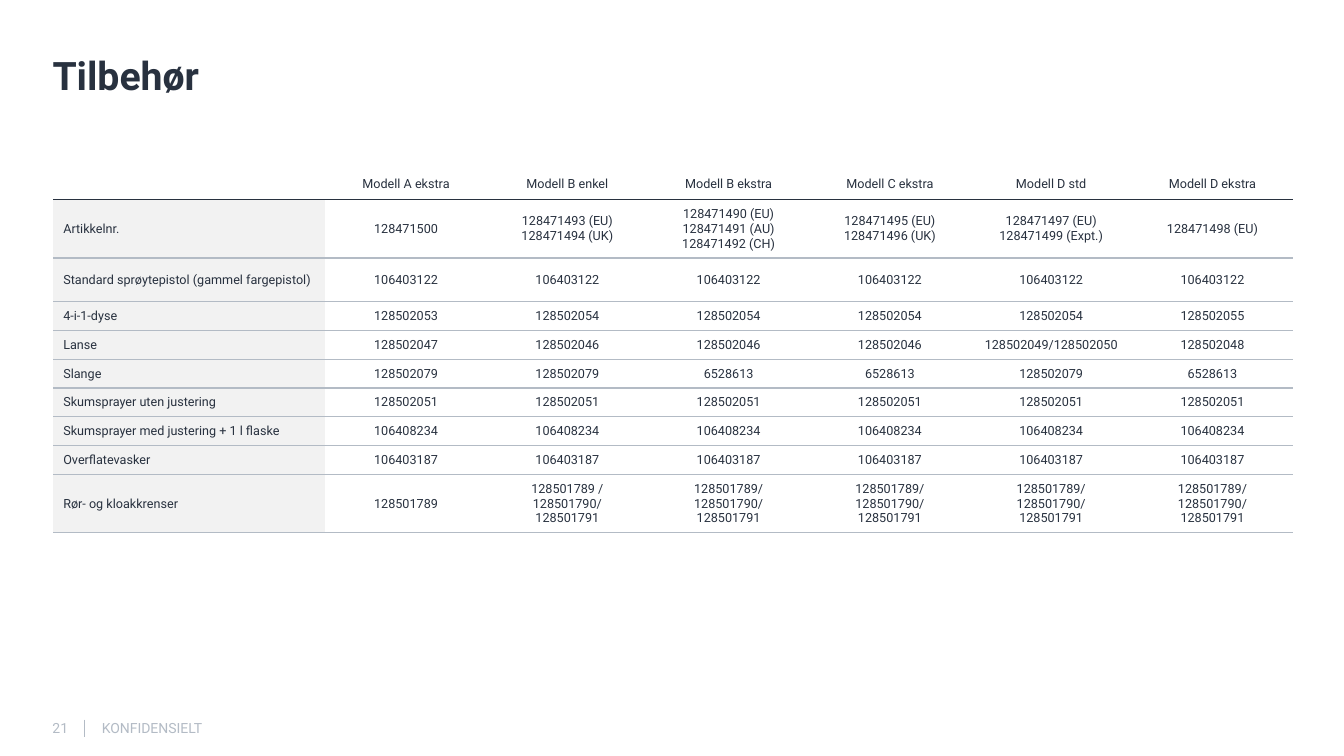
import pptx
import pptx.dml.color
import pptx.enum.shapes
import pptx.enum.text
import pptx.oxml
import pptx.oxml.ns
import pptx.util

Pt = pptx.util.Pt
ANCHOR = pptx.enum.text.MSO_ANCHOR
ALIGN = pptx.enum.text.PP_ALIGN
COLOURS = {"ink": "28313F", "rule": "B3BBC5", "label": "F2F2F2", "page": "FFFFFF"}
FONT = "Roboto"
NO_STYLE_NO_GRID = "{2D5ABB26-0587-4C30-8999-92F81FD0307C}"

# Accessory numbers: "\n" starts a paragraph, "\v" breaks a line
MODELS = ["Modell A ekstra", "Modell B enkel", "Modell B ekstra",
          "Modell C ekstra", "Modell D std", "Modell D ekstra"]
PIPE_SET = "128501789/\v128501790/\n128501791"
ROWS = [
    ["", *MODELS],
    ["Artikkelnr.", "128471500", "128471493 (EU)\n128471494 (UK)",
     "128471490 (EU)\n128471491 (AU)\n128471492 (CH)",
     "128471495 (EU)\n128471496 (UK)", "128471497 (EU)\n128471499 (Expt.)",
     "128471498 (EU)"],
    ["Standard sprøytepistol (gammel fargepistol)", *["106403122"] * 6],
    ["4-i-1-dyse", "128502053", *["128502054"] * 4, "128502055"],
    ["Lanse", "128502047", *["128502046"] * 3, "128502049/128502050", "128502048"],
    ["Slange", "128502079", "128502079", "6528613", "6528613", "128502079", "6528613"],
    ["Skumsprayer uten justering", *["128502051"] * 6],
    ["Skumsprayer med justering + 1 l flaske", *["106408234"] * 6],
    ["Overflatevasker", *["106403187"] * 6],
    ["Rør- og kloakkrenser", "128501789",
     "128501789 /\v128501790/\n128501791", *[PIPE_SET] * 4],
]
LABEL_WIDTH = 194.4
LABEL_CHARACTERS = 40
HEADER_HEIGHT = 21.6
LINE_HEIGHT = 10.55
CELL_MARGIN = 5


def colour(name):
    return pptx.dml.color.RGBColor.from_string(COLOURS[name])


def write(frame, text, size=9, ink="ink", bold=False, align=ALIGN.LEFT,
          line=None, after=None):
    """Fill a text frame with evenly formatted paragraphs."""
    frame.word_wrap = True
    for index, words in enumerate(text.split("\n")):
        para = frame.paragraphs[0] if index == 0 else frame.add_paragraph()
        para.alignment = align
        if line is not None:
            para.line_spacing = Pt(line)
        if after is not None:
            para.space_after = Pt(after)
        para.text = words
        for span in para.runs:
            span.font.name = FONT
            span.font.size = Pt(size)
            span.font.bold = bold
            span.font.color.rgb = colour(ink)
        if not words:
            para._p.get_or_add_endParaRPr().set("sz", str(size * 100))


def clear_margins(frame):
    frame.margin_left = frame.margin_right = 0
    frame.margin_top = frame.margin_bottom = 0


def add_title(page, left, top, width, height):
    title = page.shapes.title
    title.left, title.top = Pt(left), Pt(top)
    title.width, title.height = Pt(width), Pt(height)
    frame = title.text_frame
    clear_margins(frame)
    frame.auto_size = pptx.enum.text.MSO_AUTO_SIZE.NONE
    frame.vertical_anchor = ANCHOR.TOP
    write(frame, "Tilbehør", size=28, bold=True, line=31, after=4)


def add_border(cell, side, name):
    """Draw a 1 pt rule on side T or B of a cell, ahead of its fill."""
    border = pptx.oxml.parse_xml(
        f'<a:ln{side} {pptx.oxml.ns.nsdecls("a")} w="{Pt(1)}"><a:solidFill>'
        f'<a:srgbClr val="{COLOURS[name]}"/></a:solidFill></a:ln{side}>')
    cell._tc.get_or_add_tcPr().insert(0, border)


def row_height(row):
    if row is ROWS[0]:
        return HEADER_HEIGHT
    label_lines = len(row[0]) // LABEL_CHARACTERS + 1
    lines = max([label_lines, *(len(text.splitlines()) for text in row[1:])])
    return round(lines * LINE_HEIGHT + 2 * CELL_MARGIN, 2)


def format_cell(cell, text, row_index, is_label):
    cell.vertical_anchor = ANCHOR.MIDDLE
    cell.margin_left = cell.margin_right = Pt(7.2 if is_label else CELL_MARGIN)
    cell.margin_top = cell.margin_bottom = Pt(CELL_MARGIN)
    if is_label and row_index > 0:
        cell.fill.solid()
        cell.fill.fore_color.rgb = colour("label")
    else:
        cell.fill.background()
    add_border(cell, "B", "rule" if row_index else "ink")
    if row_index:
        add_border(cell, "T", "ink" if row_index == 1 else "rule")
    write(cell.text_frame, text, align=ALIGN.LEFT if is_label else ALIGN.CENTER)


def add_accessories(page, left, top, width):
    heights = [row_height(row) for row in ROWS]
    frame = page.shapes.add_table(len(ROWS), len(ROWS[0]), Pt(left), Pt(top),
                                  Pt(width), Pt(sum(heights)))
    table = frame.table
    table.first_row = table.horz_banding = False
    table._tbl.tblPr.find(pptx.oxml.ns.qn("a:tableStyleId")).text = NO_STYLE_NO_GRID
    model_width = (width - LABEL_WIDTH) / len(MODELS)
    for index, column in enumerate(table.columns):
        column.width = Pt(model_width if index else LABEL_WIDTH)
    for row_index, row in enumerate(ROWS):
        table.rows[row_index].height = Pt(heights[row_index])
        for column_index, text in enumerate(row):
            format_cell(table.cell(row_index, column_index), text,
                        row_index, column_index == 0)


def add_footer(page, left, top, height):
    # Page number and confidentiality note
    for offset, width, text in [(0, 21.6, "21"), (35.2, 164, "KONFIDENSIELT")]:
        box = page.shapes.add_textbox(Pt(left + offset), Pt(top), Pt(width), Pt(height))
        clear_margins(box.text_frame)
        box.text_frame.vertical_anchor = ANCHOR.MIDDLE
        write(box.text_frame, text, size=10, ink="rule")
    # Divider
    middle = Pt(left + 22.6)
    divider = page.shapes.add_connector(
        pptx.enum.shapes.MSO_CONNECTOR.STRAIGHT, middle, Pt(top), middle, Pt(top + height))
    divider.line.color.rgb = colour("rule")
    divider.line.width = Pt(0.25)
    divider._element.spPr.append(
        pptx.oxml.parse_xml(f'<a:effectLst {pptx.oxml.ns.nsdecls("a")}/>'))


def main():
    deck = pptx.Presentation()
    deck.slide_width, deck.slide_height = Pt(960), Pt(540)
    page = deck.slides.add_slide(deck.slide_layouts.get_by_name("Title Only"))
    page.background.fill.solid()
    page.background.fill.fore_color.rgb = colour("page")
    add_title(page, 37.5, 38.9, 884, 30.2)
    add_accessories(page, 38, 121, 885.6)
    add_footer(page, 37.5, 514, 12.2)
    deck.save("out.pptx")


if __name__ == "__main__":
    main()
